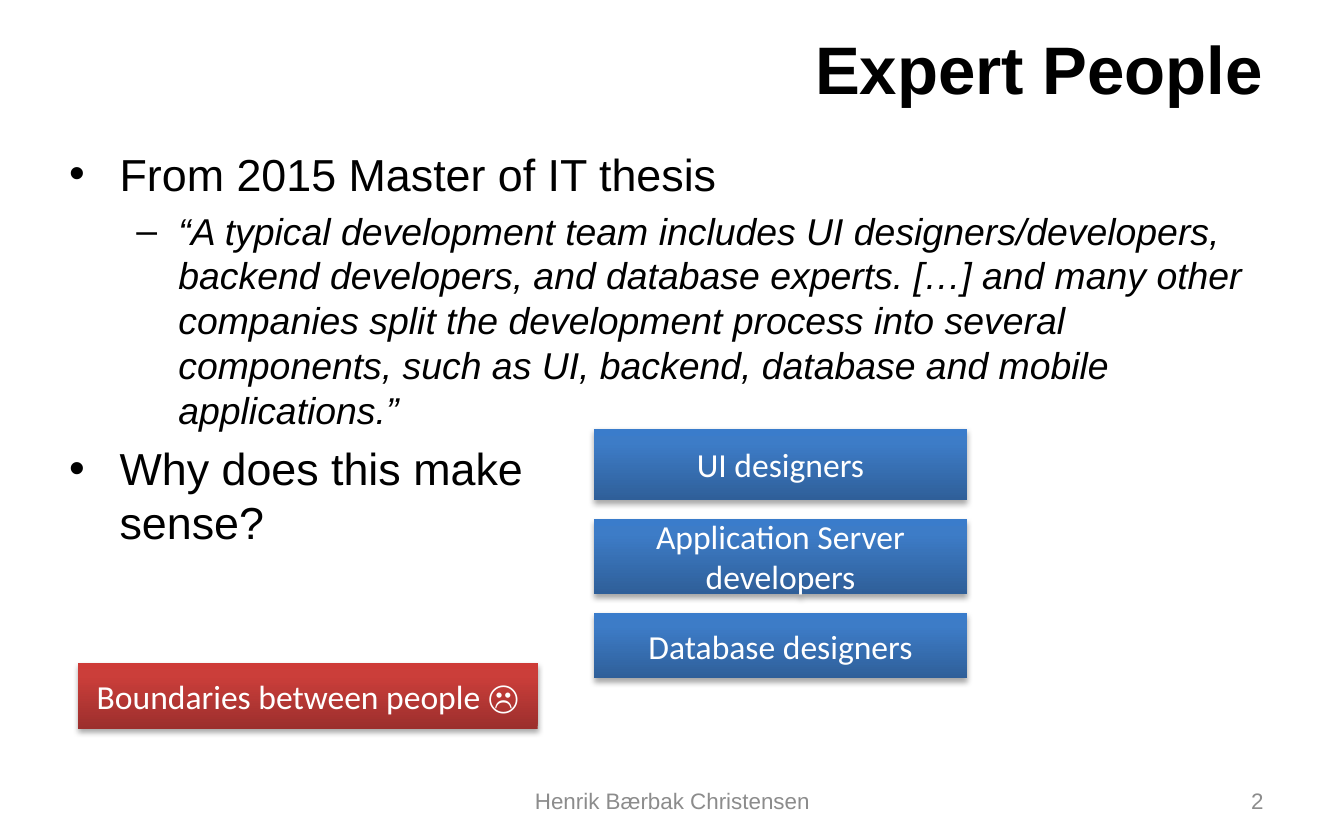
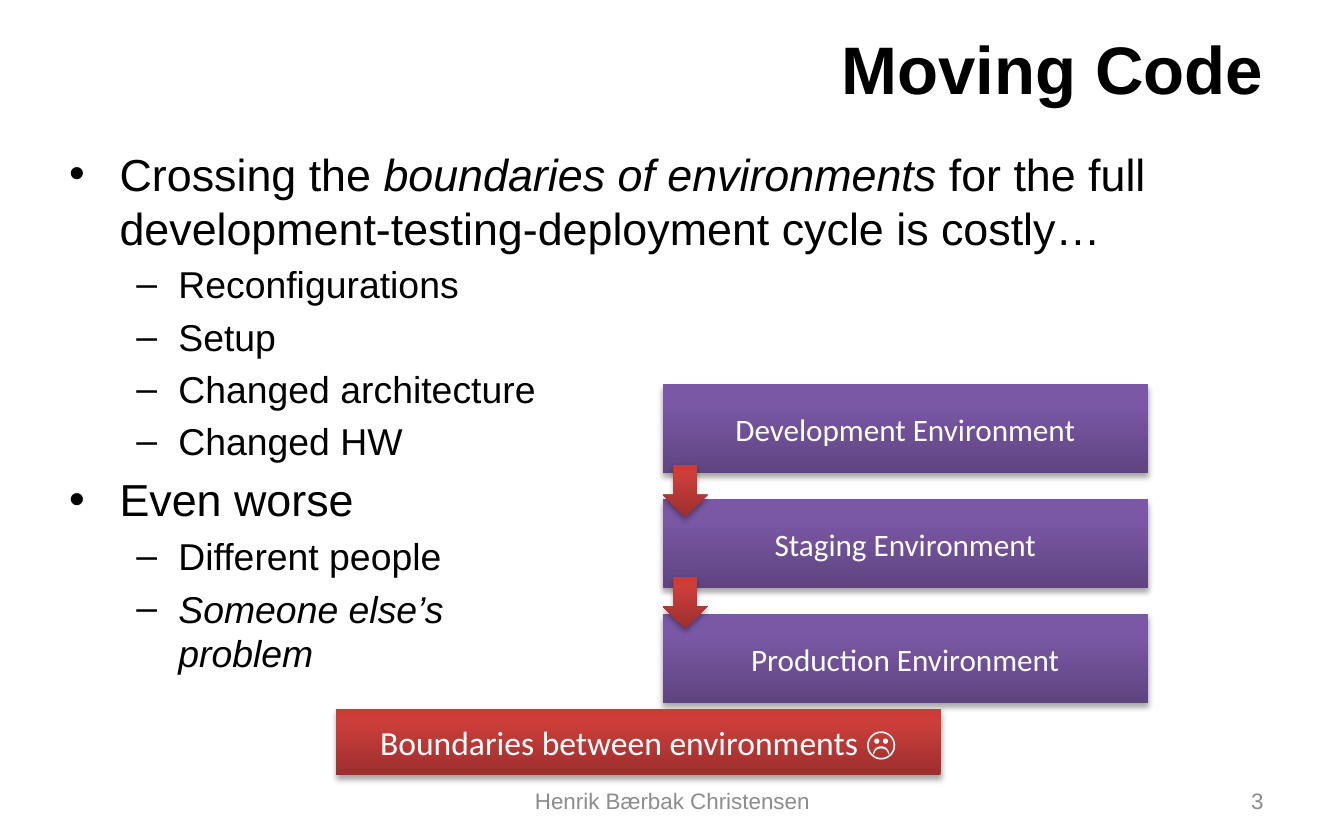
import copy
import pptx
import pptx.dml.color
import pptx.enum.shapes
import pptx.enum.text
import pptx.oxml.ns
import pptx.util
from lxml import etree

Pt = pptx.util.Pt
RGB = pptx.dml.color.RGBColor.from_string
qn = pptx.oxml.ns.qn
ALIGN = pptx.enum.text.PP_ALIGN
MIDDLE = pptx.enum.text.MSO_ANCHOR.MIDDLE
SHAPE = pptx.enum.shapes.MSO_SHAPE

COLORS = {"text": "000000", "foot": "8C8C8C", "label": "FFFFFF"}
STOPS = (0, 0.8, 1)
FILLS = {
    "blue": ("2F5F99", "3D7CC7", "3A7CCB"),
    "red": ("9C2F2D", "CB3E3A", "CE3B37"),
    "purple": ("5F4480", "7B58A6", "7C57A8"),
}
FONTS = {
    "title": {"name": "Arial", "size": Pt(36), "bold": True},
    "foot": {"name": "Arial", "size": Pt(12)},
    "label": {"name": "Calibri", "size": Pt(18)},
    "small": {"name": "Calibri", "size": Pt(16.7)},
}
# Per level: bullet, left margin, hanging indent, font size
LEVELS = (("•", 27, 27, 24), ("–", 58.5, 22.5, 20))
TIGHT = {
    "margin_left": Pt(6), "margin_right": Pt(6),
    "margin_top": Pt(3), "margin_bottom": Pt(3), "word_wrap": False,
}
FOOTER = "Henrik Bærbak Christensen"

PAGES = [
    ("Expert People", [
        (0, "From 2015 Master of IT thesis"),
        (1, "*“A typical development team includes UI designers/developers, "
            "backend developers, and database experts. […] and many other "
            "companies split the development process into several components, "
            "such as UI, backend, database and mobile applications.”*"),
        (0, "Why does this make\nsense?"),
    ]),
    ("Moving Code", [
        (0, "Crossing the *boundaries of environments *for the full "
            "development-testing-deployment cycle is costly…"),
        (1, "Reconfigurations"),
        (1, "Setup"),
        (1, "Changed architecture"),
        (1, "Changed HW"),
        (0, "Even worse"),
        (1, "Different people"),
        (1, "*Someone else’s \nproblem*"),
    ]),
]


def write(para, text, font, color, align=ALIGN.LEFT):
    """Fill a paragraph; *stars* mark italics and newlines become breaks."""
    para.alignment = align
    for i, part in enumerate(text.split("*")):
        for j, line in enumerate(part.split("\n")):
            if j:
                para.add_line_break()
            if not line:
                continue
            run = para.add_run()
            run.text = line
            for key, value in font.items():
                setattr(run.font, key, value)
            run.font.italic = i % 2 == 1
            run.font.color.rgb = RGB(COLORS[color])


def block(slide, kind, box, fill, text="", font="label", frame={}):
    """Add a shape with a gradient, a soft shadow and a centred label."""
    shape = slide.shapes.add_shape(kind, *map(Pt, box))
    shape.line.fill.background()
    shape.fill.gradient()
    shape.fill.gradient_angle = 90
    stops = shape._element.spPr.find(".//" + qn("a:gsLst"))
    stops.insert(1, copy.deepcopy(stops[0]))
    for stop, place, color in zip(shape.fill.gradient_stops, STOPS, FILLS[fill]):
        stop.position = place
        stop.color.rgb = RGB(color)
    shape.shadow.inherit = False
    effects = shape._element.spPr.find(qn("a:effectLst"))
    shadow = etree.SubElement(effects, qn("a:outerShdw"), blurRad=str(Pt(3.1)),
                              dist=str(Pt(1.8)), dir="5400000", rotWithShape="0")
    black = etree.SubElement(shadow, qn("a:srgbClr"), val="000000")
    etree.SubElement(black, qn("a:alpha"), val="35000")
    if text:
        shape.text_frame.vertical_anchor = MIDDLE
        for key, value in frame.items():
            setattr(shape.text_frame, key, value)
        write(shape.text_frame.paragraphs[0], text, FONTS[font], "label", ALIGN.CENTER)


deck = pptx.Presentation()
deck.slide_width, deck.slide_height = Pt(720), Pt(450)

# Titles, bullets and footers
slides = []
for number, (head, points) in enumerate(PAGES, 2):
    slide = deck.slides.add_slide(deck.slide_layouts[5])
    slides.append(slide)
    title = slide.shapes.title
    title.left, title.top, title.width, title.height = map(Pt, (36, 13, 648, 46.8))
    title.text_frame.vertical_anchor = MIDDLE
    title.text_frame.auto_size = pptx.enum.text.MSO_AUTO_SIZE.NONE
    write(title.text_frame.paragraphs[0], head, FONTS["title"], "text", ALIGN.RIGHT)

    body = slide.shapes.add_textbox(*map(Pt, (30, 75, 654, 340))).text_frame
    body.word_wrap = True
    for i, (level, text) in enumerate(points):
        mark, margin, hang, size = LEVELS[level]
        para = body.add_paragraph() if i else body.paragraphs[0]
        para.level = level
        para.space_before = Pt(0.2 * size if i else 0)
        props = para._p.get_or_add_pPr()
        props.set("marL", str(Pt(margin)))
        props.set("indent", str(-Pt(hang)))
        etree.SubElement(props, qn("a:buFont"), typeface="Arial")
        etree.SubElement(props, qn("a:buChar"), char=mark)
        write(para, text, {"name": "Arial", "size": Pt(size)}, "text")

    for left, width, text, align in (
        (246.2, 228.2, FOOTER, ALIGN.CENTER),
        (516, 168, str(number), ALIGN.RIGHT),
    ):
        foot = slide.shapes.add_textbox(Pt(left), Pt(417), Pt(width), Pt(24)).text_frame
        foot.word_wrap = True
        foot.vertical_anchor = MIDDLE
        write(foot.paragraphs[0], text, FONTS["foot"], "foot", align)

people, moving = slides

# Team roles
top = 229.7
for role, height in (
    ("UI designers", 38.2),
    ("Application Server developers", 40.3),
    ("Database designers", 35.3),
):
    block(people, SHAPE.RECTANGLE, (318.2, top, 200, height), "blue", role)
    top += height + 10
block(people, SHAPE.RECTANGLE, (41.8, 355, 246.2, 35.3), "red",
      "Boundaries between people ☹")

# Environments and the moves between them
for i, stage in enumerate(("Development", "Staging", "Production")):
    block(moving, SHAPE.RECTANGLE, (355, 206 + 61.6 * i, 260, 47.5), "purple",
          stage + " Environment", "small", TIGHT)
for i in range(2):
    block(moving, SHAPE.DOWN_ARROW, (355, 249.1 + 59.8 * i, 24, 28), "red")
block(moving, SHAPE.RECTANGLE, (180, 380, 324, 35.3), "red",
      "Boundaries between environments ☹")

deck.save("out.pptx")
